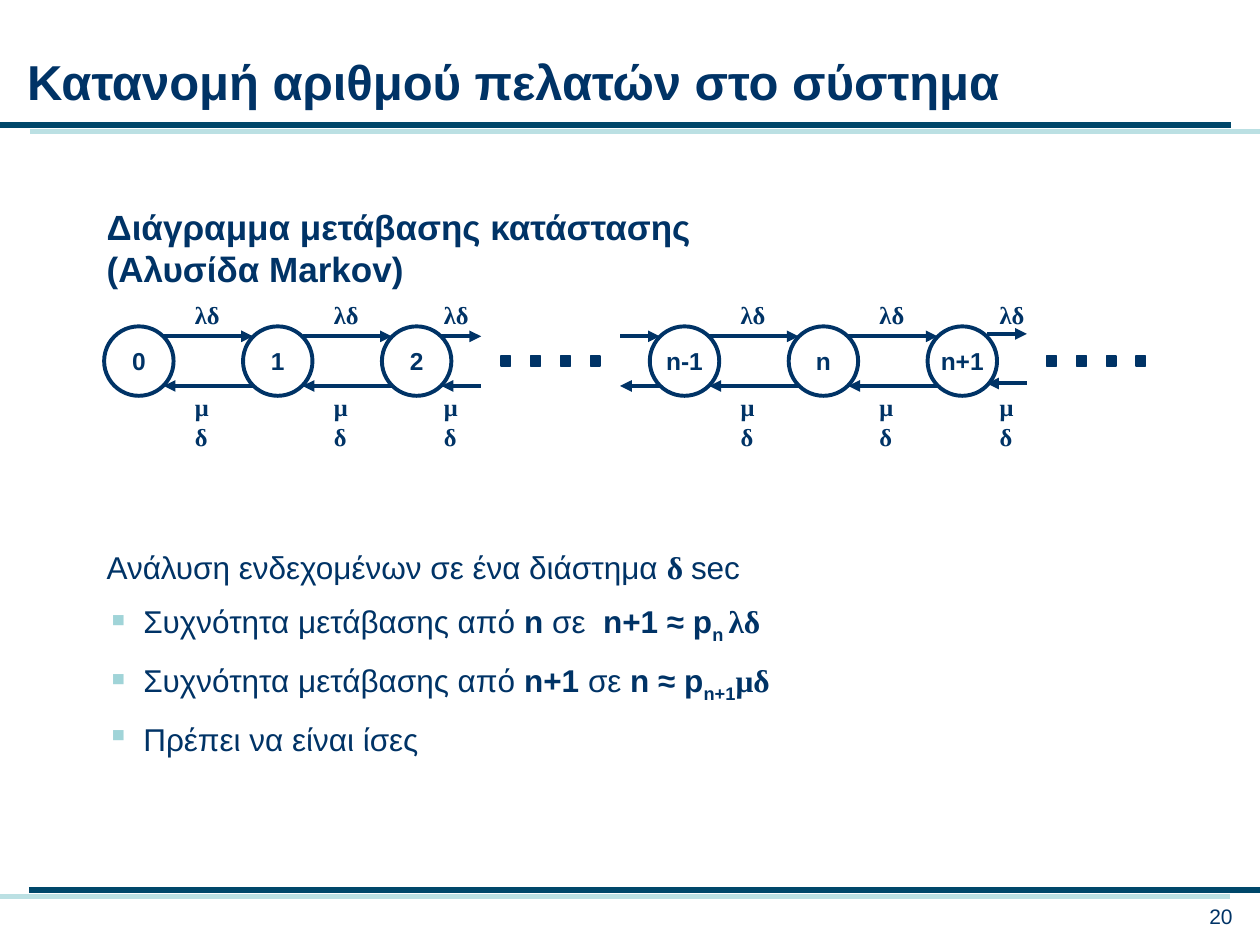
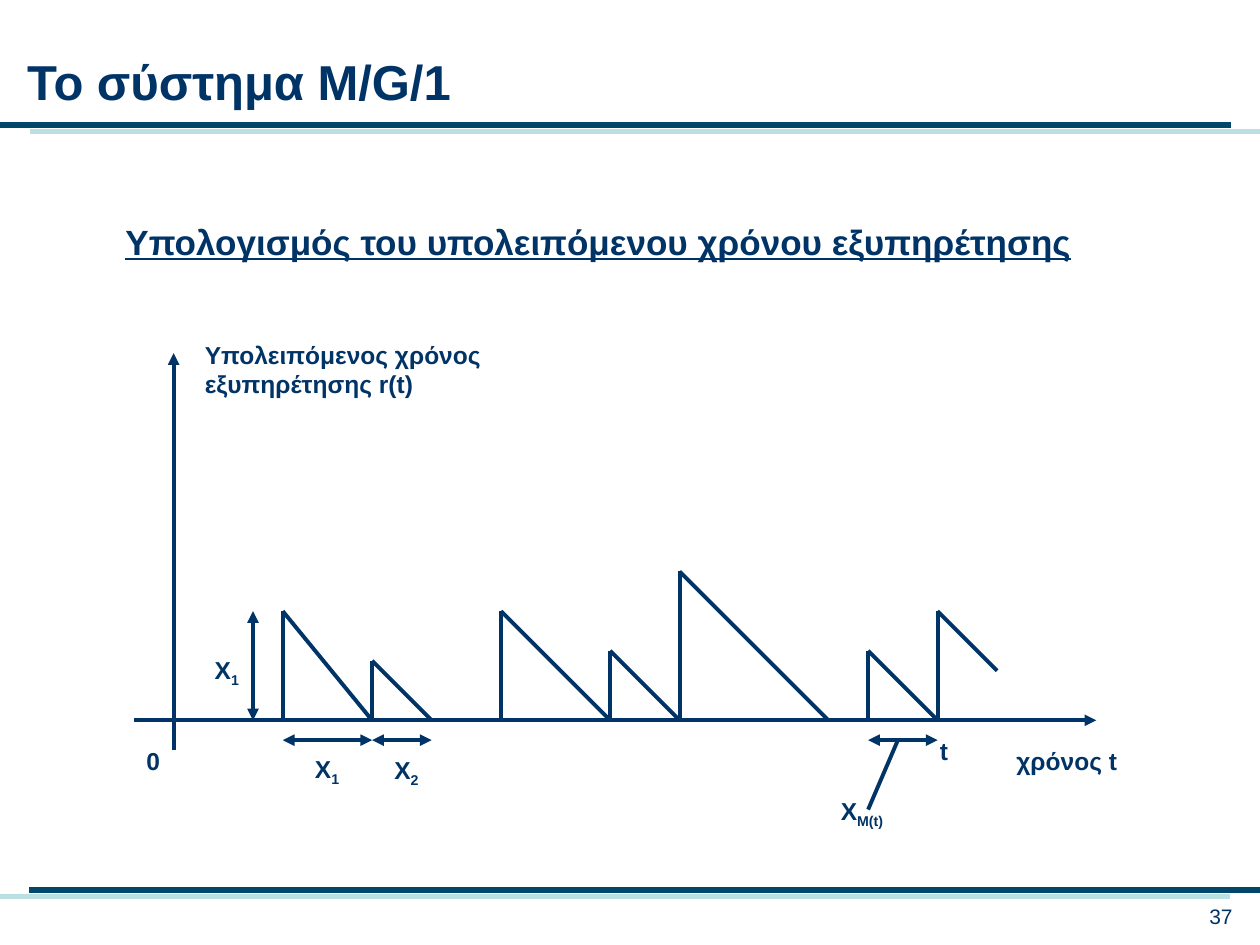
import dataclasses

import pptx
import pptx.dml.color
import pptx.enum.shapes
import pptx.enum.text
import pptx.oxml
import pptx.oxml.ns
import pptx.util

MSO_SHAPE = pptx.enum.shapes.MSO_SHAPE
ALIGN = pptx.enum.text.PP_ALIGN
NS = pptx.oxml.ns.nsdecls("a")


@dataclasses.dataclass(frozen=True)
class Theme:
    """Colours, fonts, type sizes and line widths of the deck."""
    ink: str = "003366"
    rule: str = "00476A"
    rule_shadow: str = "BBE0E3"
    bullet: str = "A0D4D8"
    sans: str = "Arial"
    serif: str = "Times New Roman"
    title: int = 28
    heading: int = 20
    body: int = 18
    label: int = 14
    page: int = 12
    stroke: float = 2.25
    thick: float = 3
    thin: float = 0.75


T = Theme()


@dataclasses.dataclass(frozen=True)
class Box:
    """A region placed on a grid of 127 columns, each 2 mm wide."""
    x: float
    y: float
    w: float = 0
    h: float = 0

    def within(self, x, y, w=0, h=0):
        """Return a box offset from this one's corner."""
        return Box(self.x + x, self.y + y, w, h)

    def lengths(self):
        """Return left, top, width and height as slide lengths."""
        return [grid(n) for n in (self.x, self.y, self.w, self.h)]


def grid(n):
    """Convert grid units to a slide length."""
    return pptx.util.Mm(2 * n)


def rgb(value):
    """Return a colour object for a hex value."""
    return pptx.dml.color.RGBColor.from_string(value)


def add_xml(parent, xml):
    """Append a drawing element written without its namespace."""
    tag, rest = xml[:-2].split(" ", 1) if xml.endswith("/>") and " " in xml else (xml, "")
    if rest:
        xml = f"{tag} {NS} {rest}/>"
    else:
        xml = xml.replace(">", f" {NS}>", 1) if not xml.endswith("/>") or "</" in xml else xml[:-2] + f" {NS}/>"
    parent.append(pptx.oxml.parse_xml(xml))


def add_runs(p, runs, size):
    """Add runs marked b bold, u underlined, t serif or _ subscript."""
    for text, marks in runs:
        r = p.add_run()
        r.text = text
        r.font.size = pptx.util.Pt(size)
        r.font.name = T.serif if "t" in marks else T.sans
        r.font.bold = "b" in marks
        r.font.color.rgb = rgb(T.ink)
        if "u" in marks:
            r.font.underline = True
        if "_" in marks:
            r._r.get_or_add_rPr().set("baseline", "-25000")


def add_text(s, box, paragraphs, size, align=None, wrap=True, bullets=False):
    """Add a text box holding paragraphs of runs."""
    tf = s.shapes.add_textbox(*box.lengths()).text_frame
    tf.word_wrap = wrap
    tf.auto_size = pptx.enum.text.MSO_AUTO_SIZE.SHAPE_TO_FIT_TEXT
    for i, runs in enumerate(paragraphs):
        p = tf.paragraphs[0] if i == 0 else tf.add_paragraph()
        if align is not None:
            p.alignment = align
        pPr = p._p.get_or_add_pPr()
        if wrap:
            pPr.append(pptx.oxml.parse_xml(
                f'<a:spcBef {NS}><a:spcPct val="50000"/></a:spcBef>'))
        if bullets:
            indent = grid(3.7)
            pPr.set("marL", str(indent))
            pPr.set("indent", str(-indent))
            pPr.append(pptx.oxml.parse_xml(
                f'<a:buClr {NS}><a:srgbClr val="{T.bullet}"/></a:buClr>'))
            pPr.append(pptx.oxml.parse_xml(f'<a:buChar {NS} char="▪"/>'))
        add_runs(p, runs, size)


def add_line(s, box, start, end, heads="", color=T.ink, width=T.stroke, shadow=""):
    """Draw a line between two points of a box, with < or > arrowheads."""
    a, b = box.within(*start), box.within(*end)
    c = s.shapes.add_connector(pptx.enum.shapes.MSO_CONNECTOR.STRAIGHT,
                               grid(a.x), grid(a.y), grid(b.x), grid(b.y))
    c.line.color.rgb = rgb(color)
    c.line.width = pptx.util.Pt(width)
    ln = c.line._get_or_add_ln()
    for mark, tag in (("<", "headEnd"), (">", "tailEnd")):
        if mark in heads:
            ln.append(pptx.oxml.parse_xml(f'<a:{tag} {NS} type="triangle"/>'))
    c._element.spPr.append(pptx.oxml.parse_xml(
        f"<a:effectLst {NS}>{shadow}</a:effectLst>"))


def add_preset(s, kind, box, width, fill=None):
    """Add an outlined preset shape, filled or hollow."""
    sp = s.shapes.add_shape(kind, *box.lengths())
    sp.shadow.inherit = False
    sp.line.color.rgb = rgb(T.ink)
    sp.line.width = pptx.util.Pt(width)
    if fill:
        sp.fill.solid()
        sp.fill.fore_color.rgb = rgb(fill)
    else:
        sp.fill.background()
    return sp


def add_rule(s, box, angle):
    """Draw a thick rule with a pale offset shadow."""
    shadow = (f'<a:outerShdw dist="{pptx.util.Pt(17.5)}" dir="{angle * 60000}" '
              f'algn="ctr" rotWithShape="0"><a:srgbClr val="{T.rule_shadow}"/>'
              "</a:outerShdw>")
    add_line(s, box, (0, 0), (box.w, 0), color=T.rule, width=T.thick, shadow=shadow)


def add_frame(prs, title, page):
    """Start a slide with its rules, title and page number."""
    s = prs.slides.add_slide(prs.slide_layouts[6])
    add_rule(s, Box(0, 12.6, 124.1), 13)
    add_rule(s, Box(2.9, 89.7, 124.1), 167)
    add_text(s, Box(1.5, 4.6, 118, 7.2), [[(title, "b")]], T.title)
    add_text(s, Box(111.5, 90.4, 14, 3.8), [[(page, "")]], T.page, ALIGN.RIGHT)
    return s


def add_state(s, box, name):
    """Draw one state of the chain as a labelled circle."""
    sp = add_preset(s, MSO_SHAPE.OVAL, box, T.stroke)
    tf = sp.text_frame
    tf.word_wrap = False
    tf.vertical_anchor = pptx.enum.text.MSO_ANCHOR.MIDDLE
    p = tf.paragraphs[0]
    p.alignment = ALIGN.CENTER
    add_runs(p, [(name, "b")], T.label)


def add_transitions(s, box, start, end, lift=0):
    """Draw the forward arrow above the backward arrow."""
    for y, heads in ((1, ">"), (6, "<")):
        add_line(s, box, (start, y - lift), (end, y - lift), heads)


def add_chain(s, box, names, exit_label, lift=0, entry=False):
    """Draw a run of states, their transitions and trailing dots."""
    if entry:
        add_transitions(s, box, -3, 1)
    for i, name in enumerate(names):
        state = box.within(14 * i, 0, 7, 7)
        last = i == len(names) - 1
        add_state(s, state, name)
        add_transitions(s, state, 6, 10 if last else 15, lift if last else 0)
        for text, y in (("λδ", -3.3), ("μδ", 6)):
            label = state.within(exit_label if last else 7.9, y, 5.1, 4.2)
            add_text(s, label, [[(text, "bt")]], T.label, wrap=False)
    for i in range(4):
        add_preset(s, MSO_SHAPE.RECTANGLE, box.within(40 + 3 * i, 3, 1, 1),
                   T.thin, T.ink)


def add_analysis(s, box):
    """Write the transition analysis and its bullets."""
    add_text(s, box.within(0, 0, 69, 5.1), [[
        ("Ανάλυση ενδεχομένων σε ένα διάστημα ", ""), ("δ ", "bt"), ("sec", "")]], T.body)
    lead = ("Συχνότητα μετάβασης από ", "")
    add_text(s, box.within(0, 5.5, box.w, 16.6), [
        [lead, ("n ", "b"), ("σε  ", ""), ("n+1 ≈ p", "b"), ("n ", "b_"), ("λδ", "bt")],
        [lead, ("n+1 ", "b"), ("σε ", ""), ("n ≈ p", "b"), ("n+1", "b_"), ("μδ", "bt")],
        [("Πρέπει να είναι ίσες", "")],
    ], T.body, bullets=True)


def add_sawtooth(s, box):
    """Plot residual service time around the origin of the box."""
    teeth = [(11, 9, 11, 0), (20, 6, 6, 0), (33, 11, 11, 0), (44, 7, 7, 0),
             (51, 15, 15, 0), (70, 7, 7, 0), (77, 6, 11, 5)]
    for x, run, height, rest in teeth:
        add_line(s, box, (x, -height), (x, 0))
        add_line(s, box, (x, -height), (x + run, -rest))
    add_line(s, box, (0, -37), (0, 3), "<")
    add_line(s, box, (-4, 0), (93, 0), ">")
    for x, end in ((11, 20), (20, 26), (70, 77)):
        add_line(s, box, (x, 2), (end, 2), "<>")
    add_line(s, box, (8, -11), (8, 0), "<>")
    add_line(s, box, (73, 2), (70, 9))
    labels = [(2.9, -7.2, 7, "X", "1"), (13, 2.8, 7, "X", "1"),
              (21, 2.9, 7, "X", "2"), (66, 7, 10, "X", "M(t)"),
              (76, 1, 7, "t", ""), (-4, 2, 5, "0", ""),
              (83.7, 2, 16.9, "χρόνος t", ""),
              (1.9, -39, 36, "Υπολειπόμενος χρόνος εξυπηρέτησης r(t)", "")]
    for x, y, w, text, sub in labels:
        runs = [(text, "b")] + ([(sub, "b_")] if sub else [])
        add_text(s, box.within(x, y, w, 4.2), [runs], T.label)


def add_markov_slide(prs):
    """Build the slide on the number of customers in the system."""
    s = add_frame(prs, "Κατανομή αριθμού πελατών στο σύστημα", "20")
    add_text(s, Box(9.5, 20.1, 69, 9.8),
             [[("Διάγραμμα μετάβασης κατάστασης (Αλυσίδα Markov)", "b")]], T.heading)
    add_analysis(s, Box(9.5, 54.6, 91.7))
    diagram = Box(10.5, 32.9)
    add_chain(s, diagram, ["0", "1", "2"], 5)
    add_chain(s, diagram.within(55, 0), ["n-1", "n", "n+1"], 6, 0.25, True)


def add_residual_slide(prs):
    """Build the slide on residual service time."""
    s = add_frame(prs, "Το σύστημα M/G/1", "37")
    add_text(s, Box(11.4, 21.6, 103, 5.6),
             [[("Υπολογισμός του υπολειπόμενου χρόνου εξυπηρέτησης", "bu")]], T.heading)
    add_sawtooth(s, Box(17.5, 72.6))


def main():
    """Build and save the deck."""
    prs = pptx.Presentation()
    prs.slide_width, prs.slide_height = grid(127), grid(95.25)
    add_markov_slide(prs)
    add_residual_slide(prs)
    prs.save("out.pptx")


if __name__ == "__main__":
    main()
